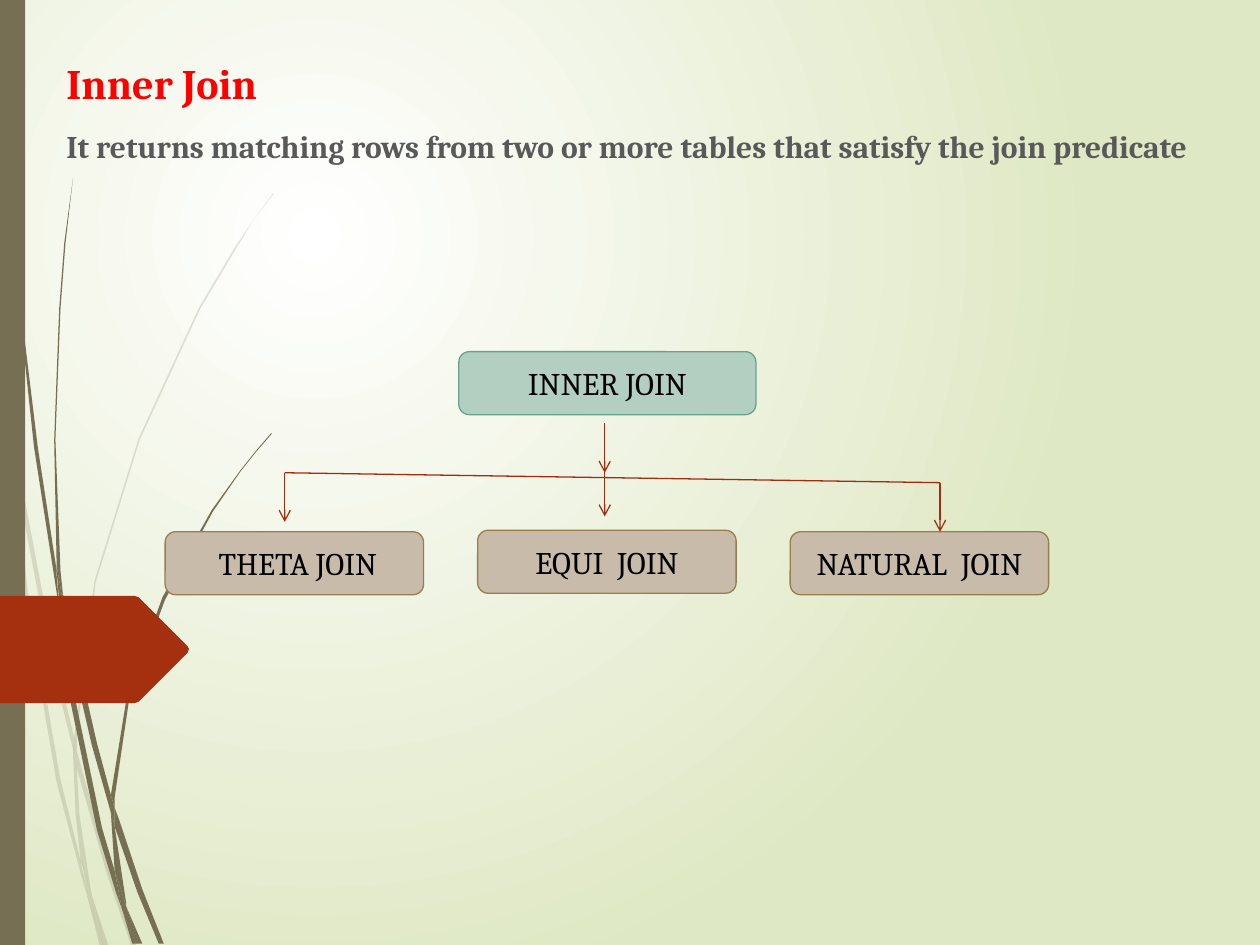
from lxml import etree
from pptx import Presentation
from pptx import util as u
from pptx.dml.color import RGBColor
from pptx.enum import shapes, text
from pptx.oxml.ns import qn

WHITE = RGBColor(0xFF, 0xFF, 0xFF)
BLACK = RGBColor(0, 0, 0)
PALE_GREEN = RGBColor(0xDF, 0xE8, 0xC4)
OLIVE = RGBColor(0x76, 0x6F, 0x54)
RUST = RGBColor(0xA5, 0x30, 0x10)
ARROW_RED = RGBColor(0x9E, 0x2E, 0x0F)
TITLE_RED = RGBColor(0xFF, 0, 0)
GREY = RGBColor(0x59, 0x59, 0x59)
MINT, MINT_EDGE = RGBColor(0xB3, 0xCF, 0xC2), RGBColor(0x65, 0xA4, 0x8B)
TAN, TAN_EDGE = RGBColor(0xC8, 0xBB, 0xAA), RGBColor(0x98, 0x7D, 0x4D)

FAINT_WISPS = [
    [(8, 350), (6, 322), (0, 282), (0, 299), (7, 344)],
    [(40, 522), (59, 599), (59, 586), (43, 520), (10, 345), (12, 376)],
    [(64, 607), (61, 596), (61, 610), (85, 694), (104, 750), (108, 750), (88, 692)],
    [(83, 750), (86, 750), (73, 711)],
    [(64, 683), (48, 619), (22, 469), (12, 376), (8, 350), (19, 470), (45, 621),
     (64, 693), (70, 714), (69, 707)],
    [(58, 599), (60, 646), (64, 683), (67, 692), (73, 711), (72, 706), (63, 646),
     (61, 610), (61, 608)],
    [(61, 584), (76, 462), (111, 349), (159, 245), (187, 198), (201, 175), (217, 154),
     (217, 153), (201, 175), (186, 197), (158, 244), (110, 348), (75, 461), (59, 584),
     (59, 586), (61, 596)],
    [(70, 714), (79, 750), (82, 750)],
    [(61, 608), (61, 610), (61, 596), (59, 586), (58, 599)],
    [(67, 692), (65, 683), (69, 707), (70, 714), (82, 750), (83, 750), (73, 711)],
]
DARK_WISPS = [
    [(5, 110), (14, 233), (27, 355), (46, 477), (47, 481), (45, 457), (45, 453),
     (30, 355), (15, 232), (6, 109), (4, 48), (3, 0), (2, 0), (3, 48)],
    [(73, 592), (88, 645), (88, 633), (88, 631), (77, 590), (50, 472), (53, 505)],
    [(94, 649), (91, 641), (91, 656), (109, 708), (126, 749), (130, 749), (113, 706)],
    [(91, 691), (81, 657), (60, 556), (53, 505), (47, 477), (56, 557), (77, 659),
     (92, 708), (97, 722), (96, 717)],
    [(50, 472), (48, 453), (44, 349), (48, 245), (52, 193), (58, 141), (51, 193),
     (47, 245), (43, 349), (45, 449), (49, 472)],
    [(110, 749), (113, 749), (100, 719)],
    [(47, 477), (53, 505), (50, 472), (49, 472), (45, 449), (45, 453)],
    [(91, 633), (103, 552), (131, 476), (169, 406), (191, 374), (203, 359), (216, 344),
     (215, 344), (203, 358), (191, 373), (168, 405), (129, 474), (101, 551), (88, 631),
     (91, 641)],
    [(97, 722), (105, 749), (108, 749)],
    [(88, 645), (91, 691), (96, 706), (100, 719), (100, 716), (91, 656), (90, 651)],
    [(88, 645), (90, 651), (91, 656), (91, 641), (88, 631), (88, 633)],
    [(96, 706), (91, 691), (96, 717), (97, 722), (108, 749), (110, 749), (100, 719)],
]
PAGE_ARROW = [(107, 558), (110, 557), (149, 518), (150, 515), (149, 513), (110, 474),
              (107, 473), (-3, 473), (-3, 558)]


class SlideBuilder:
    """Holds the style and the current slide, and draws each kind of element on it."""

    font = "Cambria"
    body_size = u.Pt(18)
    title_size = u.Pt(24)
    line_width = u.Pt(0.75)
    outline_unit = u.Cm(0.0254)

    def __init__(self, page):
        self.page = page
        self.shapes = page.shapes

    def background(self, inner, outer):
        fill = self.page.background.fill
        fill.gradient()
        for stop, color in zip(fill.gradient_stops, (inner, outer)):
            stop.color.rgb = color
        gradient = self.page.element.find(".//" + qn("a:gradFill"))
        gradient.remove(gradient.find(qn("a:lin")))
        circle = etree.SubElement(gradient, qn("a:path"), {"path": "circle"})
        etree.SubElement(circle, qn("a:fillToRect"), l="50000", t="50000", r="100000", b="100000")

    def start_group(self):
        self.shapes = self.page.shapes.add_group_shape().shapes

    def end_group(self):
        self.shapes = self.page.shapes

    def paint(self, shape, fill, edge=None):
        shape.shadow.inherit = False
        shape.fill.solid()
        shape.fill.fore_color.rgb = fill
        if edge is None:
            shape.line.fill.background()
        else:
            shape.line.color.rgb = edge
            shape.line.width = self.line_width

    def outline(self, points, color, opacity=100):
        builder = self.shapes.build_freeform(*points[0], scale=self.outline_unit)
        builder.add_line_segments(points[1:], close=True)
        shape = builder.convert_to_shape()
        self.paint(shape, color)
        if opacity < 100:
            tint = shape.element.find(".//" + qn("a:srgbClr"))
            etree.SubElement(tint, qn("a:alpha"), val=str(opacity * 1000))

    def bar(self, left, top, width, height, color):
        lengths = map(u.Cm, (left, top, width, height))
        self.paint(self.shapes.add_shape(shapes.MSO_SHAPE.RECTANGLE, *lengths), color)

    def set_text(self, para, words, size, color, bold=False):
        para.text = words
        para.font.name = self.font
        para.font.size = size
        para.font.bold = bold
        para.font.color.rgb = color

    def heading(self, left, top, width, height, lines):
        box = self.shapes.add_textbox(*map(u.Cm, (left, top, width, height)))
        frame = box.text_frame
        frame.word_wrap = True
        for index, (words, size, color) in enumerate(lines):
            para = frame.add_paragraph() if index else frame.paragraphs[0]
            self.set_text(para, words, size, color, bold=True)
            para.alignment = text.PP_ALIGN.JUSTIFY
            para.line_spacing = 1.5

    def node(self, words, left, top, width, fill, edge):
        lengths = map(u.Cm, (left, top, width, 1.27))
        box = self.shapes.add_shape(shapes.MSO_SHAPE.ROUNDED_RECTANGLE, *lengths)
        self.paint(box, fill, edge)
        box.text_frame.vertical_anchor = text.MSO_ANCHOR.MIDDLE
        para = box.text_frame.paragraphs[0]
        self.set_text(para, words, self.body_size, BLACK)
        para.alignment = text.PP_ALIGN.CENTER

    def line(self, x1, y1, x2, y2, arrow=True):
        ends = map(u.Cm, (x1, y1, x2, y2))
        connector = self.shapes.add_connector(shapes.MSO_CONNECTOR.STRAIGHT, *ends)
        connector.line.color.rgb = ARROW_RED
        connector.line.width = self.line_width
        properties = connector.element.spPr
        if arrow:
            etree.SubElement(properties.find(qn("a:ln")), qn("a:tailEnd"), type="arrow")
        etree.SubElement(properties, qn("a:effectLst"))


def main():
    deck = Presentation()
    deck.slide_width, deck.slide_height = u.Cm(25.4), u.Cm(19.05)
    slide = SlideBuilder(deck.slides.add_slide(deck.slide_layouts[6]))
    slide.background(WHITE, PALE_GREEN)

    for wisps, opacity in ((FAINT_WISPS, 20), (DARK_WISPS, 100)):
        slide.start_group()
        for points in wisps:
            slide.outline(points, OLIVE, opacity)
    slide.end_group()
    slide.bar(0, 0, 0.51, 19.05, OLIVE)
    slide.outline(PAGE_ARROW, RUST)

    slide.heading(1.09, 0.53, 23.39, 12.19, [
        ("Inner Join", slide.title_size, TITLE_RED),
        ("It returns matching rows from two or more tables that satisfy the join predicate",
         slide.body_size, GREY),
    ])

    slide.start_group()
    slide.node("INNER JOIN", 9.25, 7.09, 5.99, MINT, MINT_EDGE)
    kinds = ((" THETA JOIN", 10.72), ("EQUI  JOIN", 10.69), ("NATURAL  JOIN", 10.72))
    for column, (words, top) in enumerate(kinds):
        slide.node(words, 3.33 + 6.3 * column, top, 5.21, TAN, TAN_EDGE)
    slide.line(5.74, 9.53, 18.95, 9.73, arrow=False)
    for x, start, end in ((5.74, 9.53, 10.52), (12.19, 9.4, 10.41),
                          (18.95, 9.73, 10.72), (12.19, 8.53, 9.53)):
        slide.line(x, start, x, end)
    slide.end_group()

    deck.save("out.pptx")


if __name__ == "__main__":
    main()
